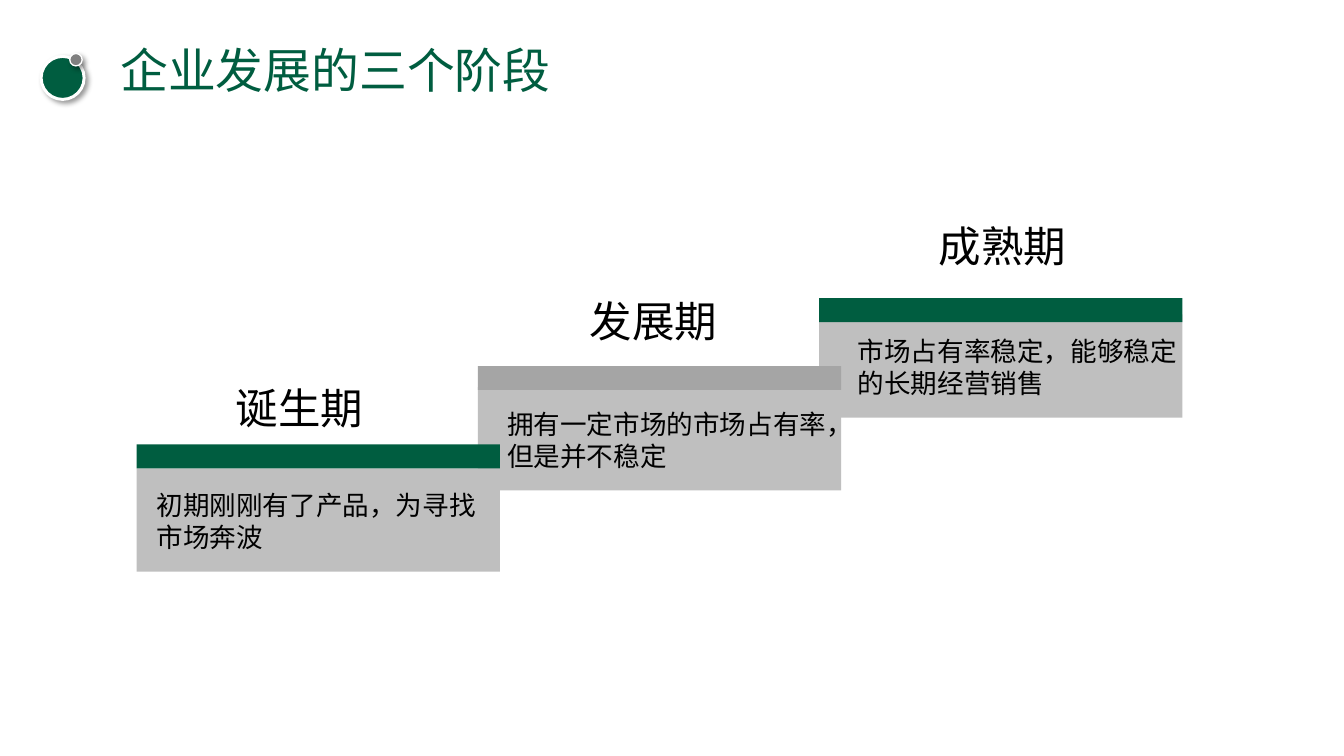
from dataclasses import dataclass

from lxml import etree
from pptx import Presentation
from pptx.dml.color import RGBColor
from pptx.enum.shapes import MSO_SHAPE
from pptx.enum.text import MSO_AUTO_SIZE
from pptx.oxml.ns import qn
from pptx.util import Inches, Pt

RECTANGLE = MSO_SHAPE.RECTANGLE
OVAL = MSO_SHAPE.OVAL
FIT_SHAPE = MSO_AUTO_SIZE.SHAPE_TO_FIT_TEXT

GREEN = RGBColor(0x00, 0x5D, 0x40)
MID_GRAY = RGBColor(0xA5, 0xA5, 0xA5)
LIGHT_GRAY = RGBColor(0xBF, 0xBF, 0xBF)
DARK_GRAY = RGBColor(0x80, 0x80, 0x80)
WHITE = RGBColor(0xFF, 0xFF, 0xFF)
BLACK = RGBColor(0x00, 0x00, 0x00)

SLIDE_WIDTH, SLIDE_HEIGHT = 14.06, 7.91
CELL = Inches(0.1)
STAGE_WIDTH, BODY_ROWS, BAR_ROWS = 38, 10.8, 2.5
FIRST_COLUMN, STAGE_STEP = 14.3, 35.7
NOTE_COLUMN, NOTE_STEP, NOTE_DROP = 15.4, 36.67, 1.7


@dataclass
class Stage:
    heading: str
    note: str
    color: RGBColor
    bar_row: float
    body_row: float
    heading_column: float
    heading_row: float


STAGES = [
    Stage("诞生期", "初期刚刚有了产品，为寻找市场奔波", GREEN, 46.5, 49, 23.7, 39.5),
    Stage("发展期", "拥有一定市场的市场占有率，但是并不稳定", MID_GRAY, 38.3, 40.5, 60.7, 30.4),
    Stage("成熟期", "市场占有率稳定，能够稳定的长期经营销售", GREEN, 31.2, 32.9, 97.2, 22.5),
]


class SlideBuilder:
    title_style = {"name": "Arial", "size": Pt(36)}
    heading_style = {"name": "Calibri", "size": Pt(32)}
    note_style = {"name": "Calibri", "size": Pt(20)}

    def __init__(self, presentation):
        self.slide = presentation.slides.add_slide(presentation.slide_layouts[6])

    def place(self, *cells):
        return [round(cell * CELL) for cell in cells]

    def block(self, kind, cells, fill, outline=None, weight=0):
        block = self.slide.shapes.add_shape(kind, *self.place(*cells))
        block.shadow.inherit = False
        block.fill.solid()
        block.fill.fore_color.rgb = fill
        if outline is None:
            block.line.fill.background()
        else:
            block.line.color.rgb = outline
            block.line.width = Pt(weight)
        return block

    def badge(self, cells, fill, weight):
        circle = self.block(OVAL, cells, fill, WHITE, weight)
        effects = circle.element.spPr.find(qn("a:effectLst"))
        shadow = etree.SubElement(
            effects, qn("a:outerShdw"), blurRad=str(Pt(4)), dist=str(Pt(3)),
            dir="2700000", algn="tl", rotWithShape="0")
        tint = etree.SubElement(shadow, qn("a:srgbClr"), val=str(BLACK))
        etree.SubElement(tint, qn("a:alpha"), val="40000")

    def text(self, words, cells, style, color=BLACK, margins=None):
        frame = self.slide.shapes.add_textbox(*self.place(*cells)).text_frame
        settings = {"word_wrap": True, "auto_size": FIT_SHAPE, **(margins or {})}
        for attribute, value in settings.items():
            setattr(frame, attribute, value)
        run = frame.paragraphs[0].add_run()
        run.text = words
        for attribute, value in style.items():
            setattr(run.font, attribute, value)
        run.font.color.rgb = color


def main():
    presentation = Presentation()
    presentation.slide_width = Inches(SLIDE_WIDTH)
    presentation.slide_height = Inches(SLIDE_HEIGHT)
    builder = SlideBuilder(presentation)

    columns = [FIRST_COLUMN + STAGE_STEP * index for index in range(len(STAGES))]
    for column, stage in reversed(list(zip(columns, STAGES))):
        builder.block(RECTANGLE, (column, stage.body_row, STAGE_WIDTH, BODY_ROWS), LIGHT_GRAY)
    for column, stage in zip(columns, STAGES):
        builder.block(RECTANGLE, (column, stage.bar_row, STAGE_WIDTH, BAR_ROWS), stage.color)

    no_margins = {f"margin_{side}": 0 for side in ("left", "top", "right", "bottom")}
    builder.text("企业发展的三个阶段", (12.6, 4.3, 97, 6.1), builder.title_style, GREEN, no_margins)
    builder.badge((4.3, 5.9, 4.5, 4.5), GREEN, 2.25)
    builder.badge((7.3, 5.6, 1.3, 1.3), DARK_GRAY, 1)

    for index, stage in enumerate(STAGES):
        builder.text(stage.heading, (stage.heading_column, stage.heading_row, 16.1, 6.4),
                     builder.heading_style)
        note_column = NOTE_COLUMN + NOTE_STEP * index
        builder.text(stage.note, (note_column, stage.body_row + NOTE_DROP, 35.9, 7.7),
                     builder.note_style)

    presentation.save("out.pptx")


if __name__ == "__main__":
    main()
